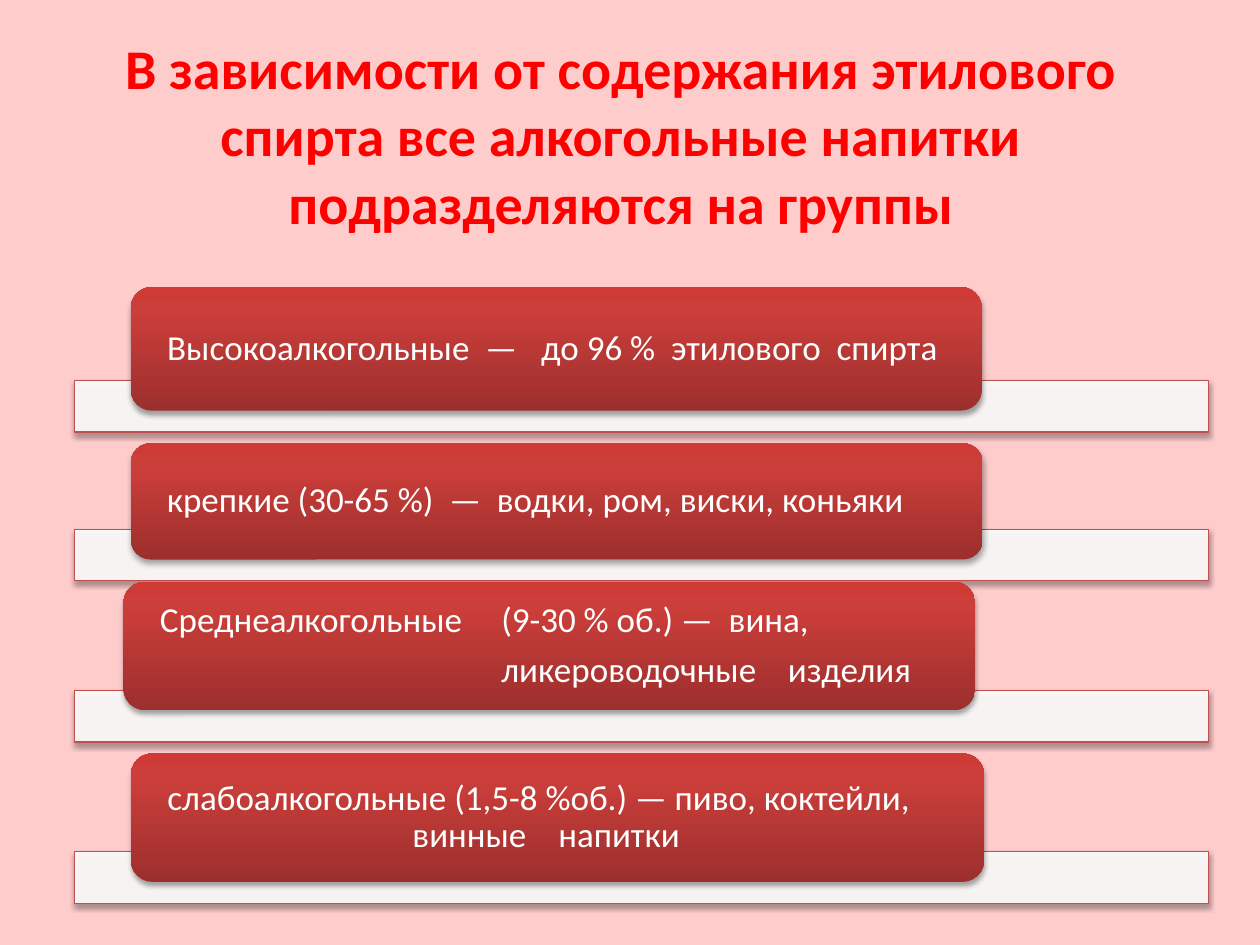
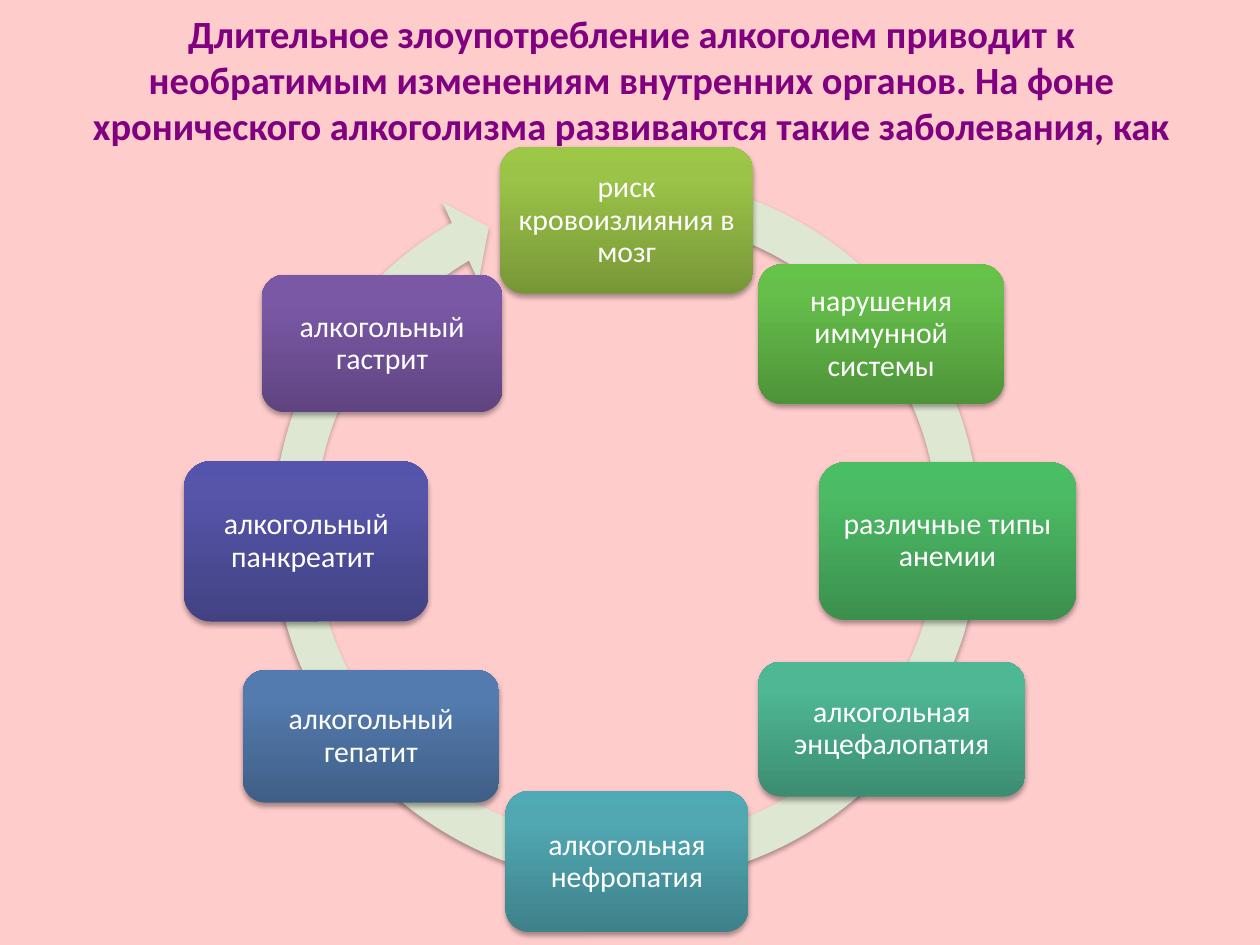
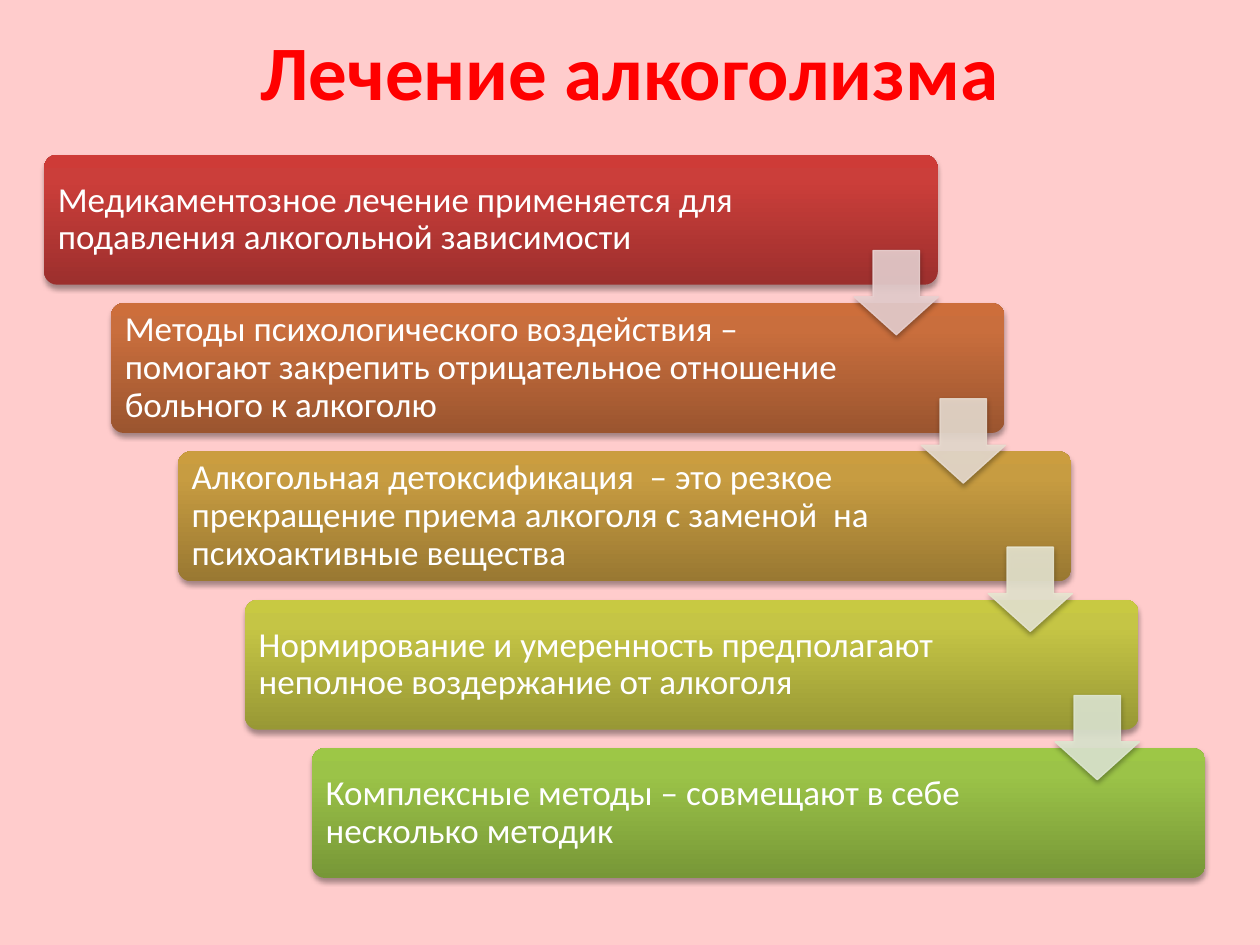
from copy import deepcopy

from lxml.etree import SubElement
from pptx import Presentation
from pptx.dml.color import RGBColor
from pptx.enum.shapes import MSO_SHAPE
from pptx.enum.text import MSO_ANCHOR, PP_ALIGN
from pptx.oxml.ns import qn
from pptx.util import Cm, Pt

FONT = "Calibri"
PINK = RGBColor(0xFF, 0xCC, 0xCC)
RED = RGBColor(0xFF, 0x00, 0x00)
PLUM = RGBColor(0x80, 0x00, 0x80)
WHITE = RGBColor(0xFF, 0xFF, 0xFF)
BRICK = RGBColor(0xC0, 0x50, 0x4D)
SAGE = RGBColor(0xDE, 0xE7, 0xD1)
ROSE = RGBColor(0xE8, 0xD0, 0xD0)
SAND = RGBColor(0xE8, 0xDC, 0xD0)
CREAM = RGBColor(0xE7, 0xE6, 0xD1)


def blend(*codes):
    return [RGBColor.from_string(code) for code in codes]


# Colours of a gradient from the bottom edge to the top edge
STOPS = (0, 0.8, 1)
CRIMSON = blend("9C2F2D", "CB3E3A", "CE3B37")
RUST = blend("9B552F", "C96E3D", "CD6E3B")
OCHRE = blend("997832", "C79C41", "CB9D3F")
OLIVE = blend("989835", "C5C545", "C8C942")
LIME = blend("779737", "9BC348", "9DC746")
GREEN = blend("4E9339", "65BF4A", "64C348")
MINT = blend("3B904D", "4CBB65", "4ABE64")
TEAL = blend("3C8D72", "4EB794", "4DBA96")
CYAN = blend("3E818A", "51A8B3", "4FAAB6")
BLUE = blend("405F87", "537BAF", "527CB1")
NAVY = blend("424283", "5655AA", "5554AD")
GRAPE = blend("5F4480", "7B58A6", "7C57A8")

# Slide 1: bar top, box place, lines of text, tab stops
GROUPS = [
    (7.67, (2.64, 5.79, 17.15, 2.49),
     ["Высокоалкогольные  —\tдо 96 %  этилового  спирта"], [7.54], 7),
    (10.67, (2.64, 8.94, 17.17, 2.34),
     ["крепкие (30-65 %)  —  водки, ром, виски, коньяки"], [], 7),
    (13.92, (2.49, 11.73, 17.17, 2.59),
     ["Среднеалкогольные\t(9-30 % об.) —  вина,",
      "\tликероводочные\tизделия"], [6.88, 12.66], 7),
    (17.17, (2.64, 15.19, 17.2, 2.59),
     ["слабоалкогольные (1,5-8 %об.) — пиво, коктейли,",
      "\tвинные\tнапитки"], [4.94, 7.88], 0),
]

# Slide 2: clockwise from the top
ILLS = [
    ("риск кровоизлияния в мозг", (10.08, 2.97, 5.11, 2.95), LIME),
    ("нарушения иммунной системы", (15.29, 5.33, 4.95, 2.82), GREEN),
    ("различные типы анемии", (16.51, 9.32, 5.18, 3.18), MINT),
    ("алкогольная энцефалопатия", (15.29, 13.34, 5.38, 2.72), TEAL),
    ("алкогольная нефропатия", (10.19, 15.95, 4.9, 2.84), CYAN),
    ("алкогольный гепатит", (4.9, 13.51, 5.16, 2.67), BLUE),
    ("алкогольный панкреатит ", (3.71, 9.3, 4.93, 3.23), NAVY),
    ("алкогольный гастрит", (5.28, 5.54, 4.85, 2.77), GRAPE),
]

# Slide 3: from top to bottom
CURES = [
    ("Медикаментозное лечение применяется для подавления "
     "алкогольной зависимости", CRIMSON),
    ("Методы психологического воздействия – помогают закрепить "
     "отрицательное отношение больного к алкоголю", RUST),
    ("Алкогольная детоксификация  – это резкое прекращение приема "
     "алкоголя с заменой  на психоактивные вещества", OCHRE),
    ("Нормирование и умеренность предполагают  неполное воздержание "
     "от алкоголя", OLIVE),
    ("Комплексные методы – совмещают в себе несколько методик", LIME),
]
ARROWS = [ROSE, SAND, CREAM, SAGE]


def write(shape, lines, size=20, color=WHITE, bold=False, align=PP_ALIGN.LEFT,
          inset=(0.25, 0.13, 0.25, 0.13), pitch=None, after=0, tabs=()):
    """Fill a shape with paragraphs; inset and tabs are in centimetres."""
    frame = shape.text_frame
    frame.word_wrap = True
    frame.vertical_anchor = MSO_ANCHOR.MIDDLE
    (frame.margin_left, frame.margin_top,
     frame.margin_right, frame.margin_bottom) = map(Cm, inset)
    for i, line in enumerate(lines):
        para = frame.add_paragraph() if i else frame.paragraphs[0]
        para.alignment = align
        para.space_after = Pt(after)
        if pitch:
            para.line_spacing = pitch
        if tabs:
            stops = SubElement(para._p.get_or_add_pPr(), qn("a:tabLst"))
            for tab in tabs:
                SubElement(stops, qn("a:tab"), pos=str(Cm(tab)), algn="l")
        run = para.add_run()
        run.text = line
        run.font.name = FONT
        run.font.size = Pt(size)
        run.font.bold = bold
        run.font.color.rgb = color


def shade(shape):
    """Give a shape the soft shadow that falls straight down."""
    shape.shadow.inherit = False
    effects = shape._element.spPr.find(qn("a:effectLst"))
    drop = SubElement(effects, qn("a:outerShdw"), blurRad=str(Pt(3.1)),
                      dist=str(Pt(1.8)), dir="5400000", rotWithShape="0")
    tint = SubElement(drop, qn("a:srgbClr"), val="000000")
    SubElement(tint, qn("a:alpha"), val="35000")


def paint(fill, color, alpha=None):
    fill.solid()
    fill.fore_color.rgb = color
    if alpha:
        tint = fill._xPr.find(".//" + qn("a:srgbClr"))
        SubElement(tint, qn("a:alpha"), val=str(alpha * 1000))


def draw(slide, kind, place, color, alpha=None, edge=None, edge_alpha=None,
         adjust=()):
    """Add a shaded shape; a list of colours makes a gradient."""
    shape = slide.shapes.add_shape(kind, *map(Cm, place))
    for i, value in enumerate(adjust):
        shape.adjustments[i] = value
    if isinstance(color, list):
        shape.fill.gradient()
        shape.fill.gradient_angle = 90
        stops = shape._element.spPr.find(".//" + qn("a:gsLst"))
        stops.append(deepcopy(stops[-1]))
        for stop, spot, tone in zip(shape.fill.gradient_stops, STOPS, color):
            stop.position = spot
            stop.color.rgb = tone
    else:
        paint(shape.fill, color, alpha)
    if edge:
        shape.line.width = Pt(0.75)
        paint(shape.line.fill, edge, edge_alpha)
    else:
        shape.line.fill.background()
    shade(shape)
    return shape


def card(slide, lines, place, color, adjust=(), **style):
    shape = draw(slide, MSO_SHAPE.ROUNDED_RECTANGLE, place, color,
                 adjust=adjust)
    write(shape, lines, pitch=0.9, **style)


def page(deck, title, place, size, color):
    """Add a pink slide with its title."""
    slide = deck.slides.add_slide(deck.slide_layouts[6])
    paint(slide.background.fill, PINK)
    box = slide.shapes.add_textbox(*map(Cm, place))
    write(box, [title], size=size, color=color, bold=True,
          align=PP_ALIGN.CENTER)
    return slide


def show_groups(deck):
    slide = page(deck, "В зависимости от содержания этилового спирта все "
                 "алкогольные напитки подразделяются на группы",
                 (1.09, 1.12, 22.86, 3.18), 32, RED)
    for top, place, lines, tabs, after in GROUPS:
        draw(slide, MSO_SHAPE.RECTANGLE, (1.5, top, 22.86, 1.04), WHITE,
             alpha=90, edge=BRICK)
        card(slide, lines, place, CRIMSON, inset=(0.61, 0, 0.61, 0),
             after=after, tabs=tabs)


def show_ills(deck):
    slide = page(deck, "Длительное злоупотребление алкоголем приводит к "
                 "необратимым изменениям внутренних органов. На фоне "
                 "хронического алкоголизма развиваются такие заболевания, как",
                 (1.3, 0, 22.86, 3.18), 22, PLUM)
    draw(slide, MSO_SHAPE.CIRCULAR_ARROW, (5.05, 3.1, 15.16, 15.16), SAGE,
         adjust=(0.055, 3.307, 144.023, 170.154, 0.058))
    for text, place, color in ILLS:
        card(slide, [text], place, color, size=17, align=PP_ALIGN.CENTER,
             inset=[0.18] * 4)


def show_cures(deck):
    slide = page(deck, "Лечение алкоголизма", (1.27, 0.32, 22.86, 2.16),
                 44, RED)
    right, down = 1.35, 2.99
    for i, (text, color) in enumerate(CURES):
        card(slide, [text], (0.89 + i * right, 3.12 + i * down, 18.01, 2.62),
             color, adjust=[0.1], inset=(0.2, 0.2, 3.25, 0.2))
    for i, color in enumerate(ARROWS):
        draw(slide, MSO_SHAPE.DOWN_ARROW,
             (17.22 + i * right, 5.05 + i * down, 1.7, 1.7), color,
             alpha=90, edge=color, edge_alpha=90, adjust=(0.55, 0.45))


def main():
    deck = Presentation()
    deck.slide_width, deck.slide_height = Cm(25.4), Cm(19.05)
    show_groups(deck)
    show_ills(deck)
    show_cures(deck)
    deck.save("out.pptx")


if __name__ == "__main__":
    main()
